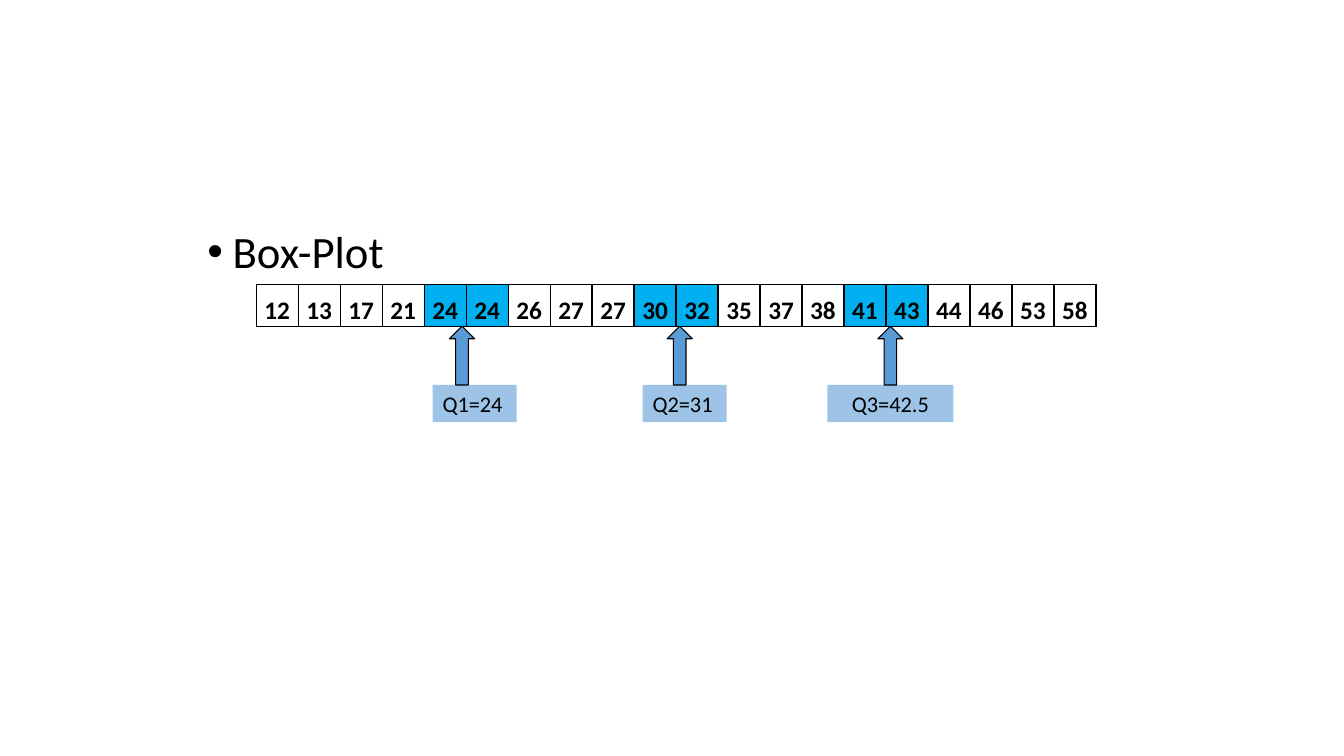
from lxml import etree
from pptx import Presentation
from pptx.dml.color import RGBColor
from pptx.enum.shapes import MSO_SHAPE
from pptx.enum.text import MSO_ANCHOR, PP_ALIGN
from pptx.oxml.ns import qn
from pptx.util import Pt

HEADING = "Box-Plot"
VALUES = [12, 13, 17, 21, 24, 24, 26, 27, 27, 30,
          32, 35, 37, 38, 41, 43, 44, 46, 53, 58]
QUARTILE_COLUMNS = {4, 5, 9, 10, 14, 15}

LEFT, CENTER = PP_ALIGN.LEFT, PP_ALIGN.CENTER
BOTTOM, TOP = MSO_ANCHOR.BOTTOM, MSO_ANCHOR.TOP
RECTANGLE, UP_ARROW = MSO_SHAPE.RECTANGLE, MSO_SHAPE.UP_ARROW

# label, label left, label width, alignment, arrow left
QUARTILES = [
    ("Q1=24", 309, 60, LEFT, 321),
    ("Q2=31", 459, 60, LEFT, 476.5),
    ("Q3=42.5", 591, 90, CENTER, 627),
]

FONT = "Calibri"
BLACK = RGBColor(0x00, 0x00, 0x00)
WHITE = RGBColor(0xFF, 0xFF, 0xFF)
HIGHLIGHT = RGBColor(0x00, 0xB0, 0xF0)
LABEL_BLUE = RGBColor(0x9D, 0xC3, 0xE6)
ARROW_BLUE = RGBColor(0x5B, 0x9B, 0xD5)

TABLE_LEFT, TABLE_TOP, CELL = 183, 203, 30
ARROW_TOP = TABLE_TOP + CELL
ARROW_WIDTH, ARROW_HEIGHT = 18, 42
LABEL_TOP = ARROW_TOP + ARROW_HEIGHT
LABEL_HEIGHT = 26.6


def place(shape, left, top, width, height):
    shape.left, shape.top = Pt(left), Pt(top)
    shape.width, shape.height = Pt(width), Pt(height)


def write(frame, text, size, align, bold=False):
    para = frame.paragraphs[0]
    para.text = text
    para.alignment = align
    font = para.runs[0].font
    font.name, font.size, font.bold = FONT, Pt(size), bold
    font.color.rgb = BLACK


def add_block(page, kind, bounds, color):
    left, top, width, height = map(Pt, bounds)
    shape = page.shapes.add_shape(kind, left, top, width, height)
    shape.shadow.inherit = False
    shape.fill.solid()
    shape.fill.fore_color.rgb = color
    return shape


def add_borders(cell):
    """Put a black 1 pt line on each side, ahead of the cell's fill."""
    properties = cell._tc.get_or_add_tcPr()
    for position, side in enumerate(("a:lnL", "a:lnR", "a:lnT", "a:lnB")):
        line = etree.Element(qn(side), w=str(Pt(1)))
        fill = etree.SubElement(line, qn("a:solidFill"))
        etree.SubElement(fill, qn("a:srgbClr"), val=str(BLACK))
        properties.insert(position, line)


def add_heading(page):
    body = page.placeholders[1]
    place(body, 141, 160.5, 636, 114)
    body.fill.solid()
    body.fill.fore_color.rgb = WHITE
    frame = body.text_frame
    frame.vertical_anchor = TOP
    para = frame.paragraphs[0]
    para.line_spacing = 0.9
    properties = para._p.get_or_add_pPr()
    properties.set("marL", str(Pt(18)))
    properties.set("indent", str(Pt(-18)))
    etree.SubElement(properties, qn("a:buFont"), typeface="Arial")
    etree.SubElement(properties, qn("a:buChar"), char="•")
    write(frame, HEADING, 32, LEFT)


def add_quartile(page, label, left, width, align, arrow_left):
    box = add_block(page, RECTANGLE, (left, LABEL_TOP, width, LABEL_HEIGHT), LABEL_BLUE)
    box.line.fill.background()
    write(box.text_frame, label, 16, align)
    arrow = add_block(page, UP_ARROW,
                      (arrow_left, ARROW_TOP, ARROW_WIDTH, ARROW_HEIGHT), ARROW_BLUE)
    arrow.line.color.rgb = BLACK
    arrow.line.width = Pt(0.75)


def add_values(page):
    table = page.shapes.add_table(1, len(VALUES), Pt(TABLE_LEFT), Pt(TABLE_TOP),
                                  Pt(CELL * len(VALUES)), Pt(CELL)).table
    table.first_row = table.horz_banding = False
    for column, value in enumerate(VALUES):
        table.columns[column].width = Pt(CELL)
        cell = table.cell(0, column)
        cell.margin_left = cell.margin_right = cell.margin_top = Pt(0.75)
        cell.margin_bottom = 0
        cell.vertical_anchor = BOTTOM
        if column in QUARTILE_COLUMNS:
            cell.fill.solid()
            cell.fill.fore_color.rgb = HIGHLIGHT
        else:
            cell.fill.background()
        add_borders(cell)
        write(cell.text_frame, str(value), 18, CENTER, bold=True)


def main():
    deck = Presentation()
    deck.slide_width, deck.slide_height = Pt(960), Pt(540)
    page = deck.slides.add_slide(deck.slide_layouts[1])
    title = page.shapes.title.element
    title.getparent().remove(title)
    add_heading(page)
    for quartile in QUARTILES:
        add_quartile(page, *quartile)
    add_values(page)
    deck.save("out.pptx")


if __name__ == "__main__":
    main()
